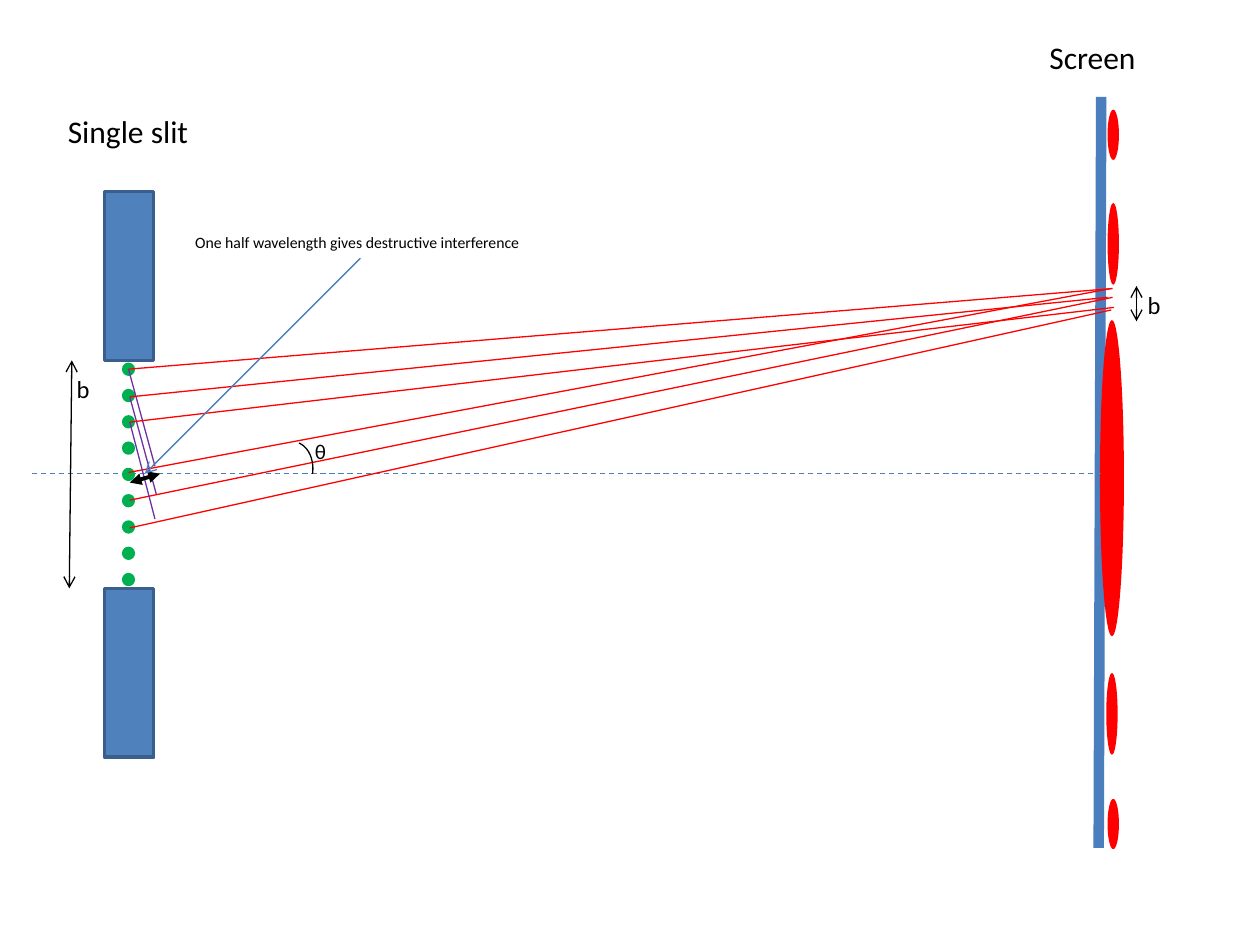
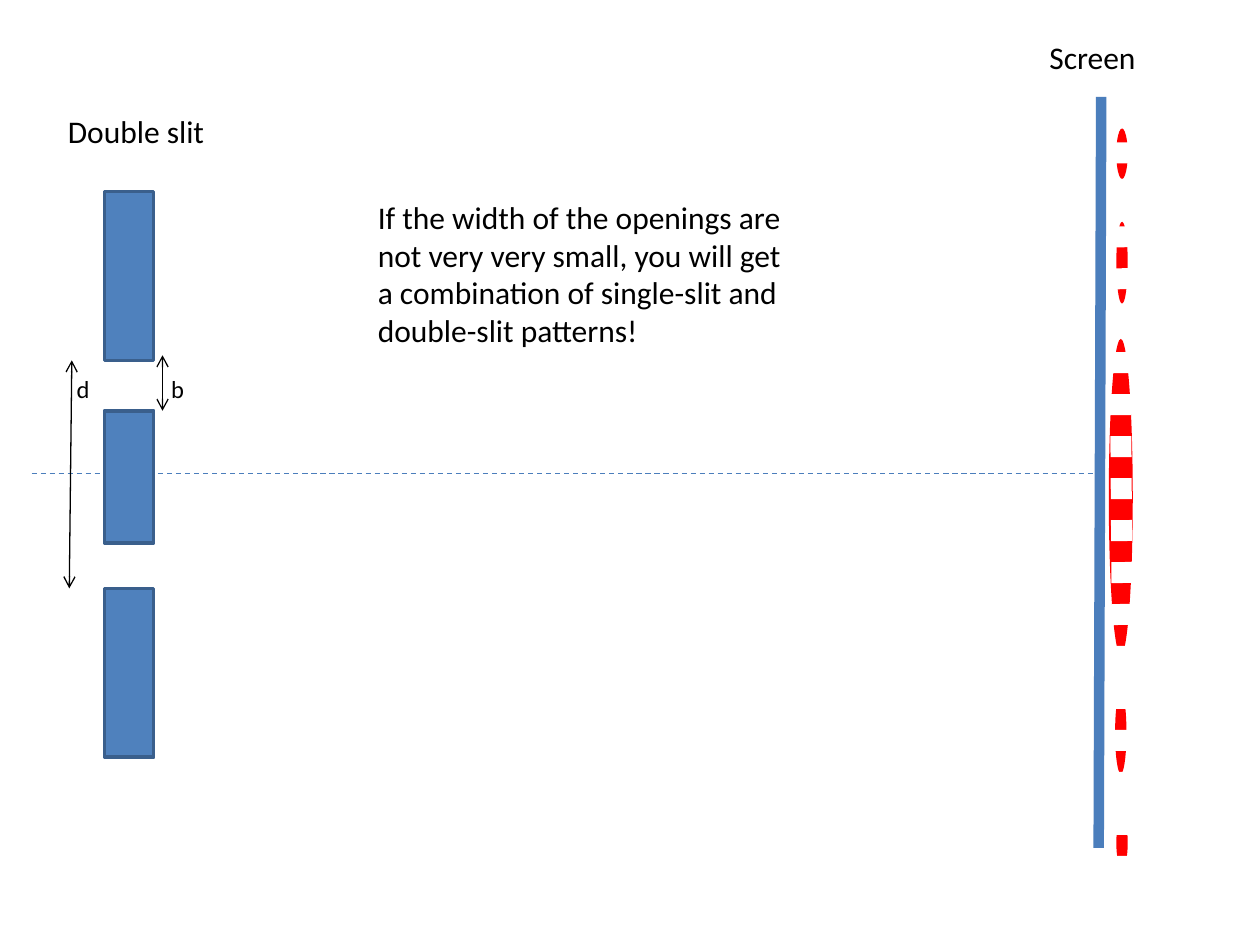
from dataclasses import dataclass

from lxml import etree
from pptx import Presentation
from pptx.dml.color import RGBColor
from pptx.enum.dml import MSO_LINE
from pptx.enum.shapes import MSO_CONNECTOR, MSO_SHAPE
from pptx.enum.text import MSO_AUTO_SIZE
from pptx.oxml.ns import qn
from pptx.util import Inches, Pt

STRAIGHT = MSO_CONNECTOR.STRAIGHT
RECT, OVAL, ARC = MSO_SHAPE.RECTANGLE, MSO_SHAPE.OVAL, MSO_SHAPE.ARC
DASH, DOTS = MSO_LINE.DASH, MSO_LINE.ROUND_DOT


@dataclass(frozen=True)
class Theme:
    font: str = "Calibri"
    title: int = 18
    symbol: int = 14
    angle: int = 12
    note: int = 9
    thin: float = 0.75
    edge: float = 2
    block: str = "4F81BD"
    block_edge: str = "3A5F8C"
    blue: str = "4B7EBC"
    light: str = "FF0000"
    source: str = "00B050"
    wavefront: str = "7030A0"
    ink: str = "000000"
    paper: str = "FFFFFF"


T = Theme()

# Content: lengths in inches; lines are (from, to), boxes are (left, top, width, height)
SLIT_TITLES = {"single": ("Single slit", 1.17), "double": ("Double slit", 1.3)}
SCREEN_TITLE = ("Screen", (8.23, 0.25, 0.89, 0.4))
NOTE = ("One half wavelength gives destructive interference", (1.45, 1.8, 2.82, 0.25))
REMARK = ("If the width of the openings are not very very small, you will get "
          "a combination of single-slit and double-slit patterns!", (2.9, 1.52, 3.49, 1.31))

BLOCK_X, BLOCK_W = 0.83, 0.39
OUTER_BLOCKS = [(1.52, 1.34), (4.67, 1.34)]  # top, height
MIDDLE_BLOCK = (3.26, 1.05)
SCREEN = ((8.74, 0.77), (8.72, 6.73))
AXIS = ((0.25, 3.76), (8.74, 3.76))
OPENING = ((0.57, 2.86), (0.55, 4.67))
SOURCES = ((1.02, 2.93), (1.02, 4.68))

FRINGES = [(8.73, 2.54, 0.19, 2.51), (8.79, 1.61, 0.09, 0.65), (8.78, 5.34, 0.09, 0.65),
           (8.79, 0.87, 0.09, 0.4), (8.79, 6.34, 0.09, 0.4)]
FRINGE_SHIFT = {"single": (0, 0), "double": (0.07, 0.15)}
FRINGE_GAPS = ((8.88, 1.13), (8.92, 6.94))

# Each pair of rays: upper source, its end, lower source, its end, wavefront end
RAY_PAIRS = [
    ((1.02, 2.93), (8.83, 2.29), (1.02, 3.75), (8.82, 2.29), (1.23, 3.7)),
    ((1.03, 3.15), (8.79, 2.36), (1.03, 3.97), (8.83, 2.36), (1.24, 3.92)),
    ((1.03, 3.35), (8.84, 2.44), (1.03, 4.19), (8.82, 2.46), (1.23, 4.12)),
]


def rgb(color):
    return RGBColor.from_string(color)


def inches(values):
    return [Inches(v) for v in values]


def add_line(shapes, ends, color, width=T.thin, dash=None, head=None, tail=None):
    start, end = ends
    line = shapes.add_connector(STRAIGHT, *inches(start + end))
    line.line.color.rgb = rgb(color)
    line.line.width = Pt(width)
    if dash is not None:
        line.line.dash_style = dash
    ln = line.line._get_or_add_ln()
    for tag, kind in (("a:headEnd", head), ("a:tailEnd", tail)):
        if kind:
            etree.SubElement(ln, qn(tag)).set("type", kind)
    etree.SubElement(line._element.spPr, qn("a:effectLst"))
    return line


def add_measure(shapes, ends):
    add_line(shapes, ends, T.ink, head="arrow", tail="arrow")


def add_figure(shapes, kind, box, fill=None, edge=None, width=T.thin):
    sp = shapes.add_shape(kind, *inches(box))
    sp.shadow.inherit = False
    if fill:
        sp.fill.solid()
        sp.fill.fore_color.rgb = rgb(fill)
    else:
        sp.fill.background()
    if edge:
        sp.line.color.rgb = rgb(edge)
        sp.line.width = Pt(width)
    else:
        sp.line.fill.background()
    return sp


def add_text(shapes, text, box, size, wrap=False):
    tf = shapes.add_textbox(*inches(box)).text_frame
    tf.word_wrap = wrap
    tf.auto_size = MSO_AUTO_SIZE.SHAPE_TO_FIT_TEXT
    p = tf.paragraphs[0]
    p.text = text
    p.font.name, p.font.size = T.font, Pt(size)
    p.font.color.rgb = rgb(T.ink)


def add_symbol(shapes, text, left, top):
    add_text(shapes, text, (left, top, 0.31, 0.34), T.symbol)


def add_block(shapes, top, height):
    add_figure(shapes, RECT, (BLOCK_X, top, BLOCK_W, height), T.block, T.block_edge, T.edge)


def add_setup(prs, kind, opening_symbol):
    """Add a slide with the parts both experiments share; return its shapes and fringes."""
    shapes = prs.slides.add_slide(prs.slide_layouts[6]).shapes
    for top, height in OUTER_BLOCKS:
        add_block(shapes, top, height)
    add_line(shapes, SCREEN, T.blue, 6)
    title, width = SLIT_TITLES[kind]
    add_text(shapes, title, (0.44, 0.84, width, 0.4), T.title)
    add_text(shapes, *SCREEN_TITLE, T.title)
    fringes = shapes.add_group_shape().shapes
    dx, dy = FRINGE_SHIFT[kind]
    for x, y, w, h in FRINGES:
        add_figure(fringes, OVAL, (x + dx, y + dy, w, h), T.light)
    add_line(shapes, AXIS, T.blue, dash=DASH)
    add_measure(shapes, OPENING)
    add_symbol(shapes, opening_symbol, 0.51, 2.92)
    return shapes, fringes


def build_single_slit(prs):
    shapes, _ = add_setup(prs, "single", "b")

    # Point sources across the opening
    sources = add_line(shapes, SOURCES, T.source, 7.5, DOTS)
    sources.line._get_or_add_ln().set("cap", "rnd")

    # Ray pairs with their wavefronts
    for upper, upper_end, lower, lower_end, front_end in RAY_PAIRS:
        pair = shapes.add_group_shape().shapes
        add_line(pair, (upper, upper_end), T.light)
        add_line(pair, (lower, lower_end), T.light)
        add_line(pair, (upper, front_end), T.wavefront)

    # Path difference and its note
    add_line(shapes, ((1.03, 3.83), (1.27, 3.76)), T.ink, 2.25,
             head="triangle", tail="triangle")
    add_text(shapes, *NOTE, T.note)
    add_line(shapes, ((2.86, 2.05), (1.15, 3.76)), T.blue, tail="arrow")

    # Width at the screen
    width_mark = shapes.add_group_shape().shapes
    add_measure(width_mark, ((9.02, 2.55), (9.02, 2.27)))
    add_symbol(width_mark, "b", 9.01, 2.25)

    # Angle
    arc = add_figure(shapes, ARC, (2.1, 3.5, 0.38, 0.5), edge=T.ink)
    arc.rotation = 13.2
    arc.adjustments[0], arc.adjustments[1] = 165.89, 210.1
    add_text(shapes, "θ", (2.4, 3.43, 0.29, 0.3), T.angle)


def build_double_slit(prs):
    shapes, fringes = add_setup(prs, "double", "d")
    add_block(shapes, *MIDDLE_BLOCK)
    add_measure(shapes, ((1.29, 2.82), (1.29, 3.26)))
    add_symbol(shapes, "b", 1.26, 2.92)
    add_text(shapes, *REMARK, T.title, wrap=True)
    add_line(fringes, FRINGE_GAPS, T.paper, 12, DOTS)


def main():
    prs = Presentation()
    prs.slide_width, prs.slide_height = Inches(10), Inches(7.5)
    build_single_slit(prs)
    build_double_slit(prs)
    prs.save("out.pptx")


if __name__ == "__main__":
    main()
